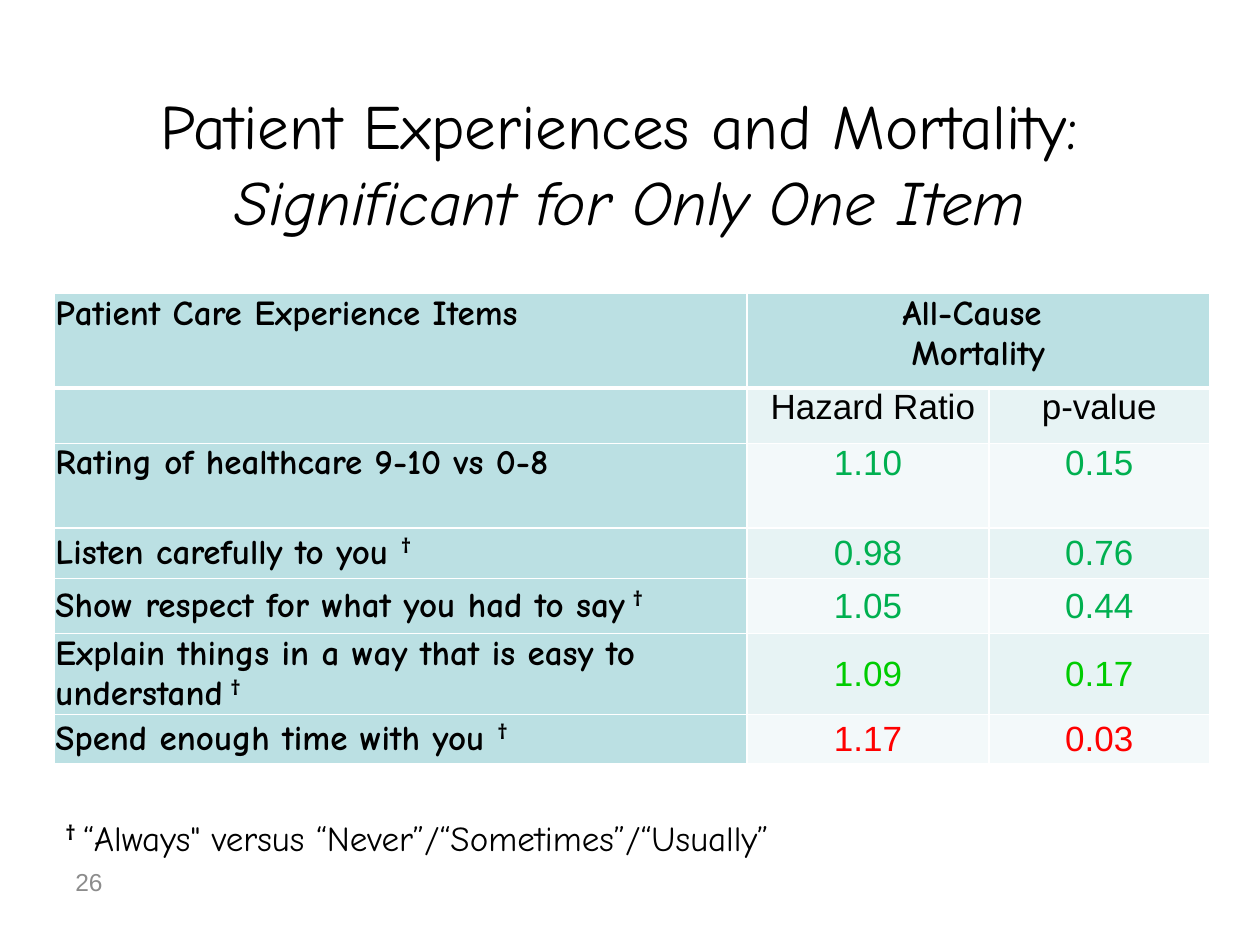
import pptx
import pptx.dml.color
import pptx.enum.text
import pptx.oxml
import pptx.oxml.ns
import pptx.util
from pptx.util import Inches

ALIGN = pptx.enum.text.PP_ALIGN
ANCHOR = pptx.enum.text.MSO_ANCHOR
HEADING = {"name": "Comic Neue", "size": 20, "color": "000000", "bold": True}
FIGURE = {"name": "Arial", "size": 20, "color": "000000", "bold": False}
TEAL, PALE, PALER = "BBE0E3", "E7F3F4", "F3F9FA"
GREEN, BRIGHT_GREEN, RED = "00B050", "00CC00", "FF0000"

COLUMN_WIDTHS = [5.5, 1.92, 1.75]
ROW_HEIGHTS = [0.75, 0.44, 0.67, 0.4, 0.44, 0.39, 0.39]
# item, dagger mark, hazard ratio, p-value, colour of the figures
ITEMS = [
    ("Rating of healthcare 9-10 vs 0-8", "", "1.10", "0.15", GREEN),
    ("Listen carefully to you ", "†", "0.98", "0.76", GREEN),
    ("Show respect for what you had to say", " †", "1.05", "0.44", GREEN),
    ("Explain things in a way that is easy to understand", " †", "1.09", "0.17", BRIGHT_GREEN),
    ("Spend enough time with you ", "†", "1.17", "0.03", RED),
]


def rgb(value):
    return pptx.dml.color.RGBColor.from_string(value)


def add_span(para, text, formats, raised=False):
    span = para.add_run()
    span.text = text
    for name, value in formats.items():
        if name == "color":
            span.font.color.rgb = rgb(value)
        else:
            setattr(span.font, name, pptx.util.Pt(value) if name == "size" else value)
    if raised:
        span._r.get_or_add_rPr().set("baseline", "30000")


def add_text_box(page, box):
    frame = page.shapes.add_textbox(*map(Inches, box)).text_frame
    frame.word_wrap = True
    return frame.paragraphs[0]


def add_title(page, box):
    title = page.shapes.title
    title.left, title.top, title.width, title.height = map(Inches, box)
    frame = title.text_frame
    frame.vertical_anchor = ANCHOR.MIDDLE
    frame.auto_size = pptx.enum.text.MSO_AUTO_SIZE.NONE
    para = frame.paragraphs[0]
    para.alignment = ALIGN.CENTER
    formats = {"name": "Comic Neue", "size": 36, "color": "000000"}
    add_span(para, "Patient Experiences and Mortality: ", formats)
    para.add_line_break()
    add_span(para, "Significant for Only One Item", {**formats, "italic": True})


def style_cell(cell, fill, bottom_width, anchor):
    margins = {"margin_left": 0.01, "margin_right": 0.01, "margin_top": 0, "margin_bottom": 0}
    for name, value in margins.items():
        setattr(cell, name, Inches(value))
    cell.vertical_anchor = anchor
    cell.fill.solid()
    cell.fill.fore_color.rgb = rgb(fill)
    # White borders, which come before the fill in the cell properties
    properties = cell._tc.get_or_add_tcPr()
    for index, side in enumerate("LRTB"):
        width = pptx.util.Pt(bottom_width if side == "B" else 1)
        properties.insert(index, pptx.oxml.parse_xml(
            f'<a:ln{side} {pptx.oxml.ns.nsdecls("a")} w="{width}"><a:solidFill>'
            f'<a:srgbClr val="FFFFFF"/></a:solidFill></a:ln{side}>'))


def fill_cell(cell, text, formats, alignment=ALIGN.CENTER, mark=""):
    frame = cell.text_frame
    for index, line in enumerate(text.split("\n")):
        para = frame.add_paragraph() if index else frame.paragraphs[0]
        para.alignment = alignment
        add_span(para, line, formats)
    if mark:
        add_span(para, mark, formats, raised=True)


def add_results_table(page, box):
    table = page.shapes.add_table(
        len(ROW_HEIGHTS), len(COLUMN_WIDTHS), *map(Inches, box)).table
    for column, width in zip(table.columns, COLUMN_WIDTHS):
        column.width = Inches(width)
    for row, height in zip(table.rows, ROW_HEIGHTS):
        row.height = Inches(height)

    # Teal header row and item column, banded figures
    for r in range(len(ROW_HEIGHTS)):
        for c in range(len(COLUMN_WIDTHS)):
            fill = TEAL if r == 0 or c == 0 else PALE if r % 2 else PALER
            anchor = ANCHOR.TOP if r < 3 else ANCHOR.MIDDLE
            style_cell(table.cell(r, c), fill, 1 if r else 3, anchor)

    # Headings
    table.cell(0, 1).merge(table.cell(0, 2))
    fill_cell(table.cell(0, 0), "Patient Care Experience Items", HEADING, ALIGN.LEFT)
    fill_cell(table.cell(0, 1), "All-Cause \nMortality", HEADING)
    fill_cell(table.cell(1, 1), " Hazard Ratio", FIGURE)
    fill_cell(table.cell(1, 2), "p-value", FIGURE)

    # One row for each item
    for r, (item, mark, ratio, p_value, color) in enumerate(ITEMS, start=2):
        fill_cell(table.cell(r, 0), item, HEADING, ALIGN.LEFT, mark)
        for c, value in enumerate((ratio, p_value), start=1):
            fill_cell(table.cell(r, c), value, {**FIGURE, "color": color})


def add_footnote(page, box):
    para = add_text_box(page, box)
    add_span(para, "† ", HEADING, raised=True)
    add_span(para, "“Always\" versus “Never”/“Sometimes”/“Usually”", {**HEADING, "bold": False})


def add_page_number(page, box):
    para = add_text_box(page, box)
    add_span(para, "26", {"name": "Arial", "size": 14, "color": "8C8C8C"})


def main():
    deck = pptx.Presentation()
    deck.slide_width, deck.slide_height = Inches(10), Inches(7.5)
    page = deck.slides.add_slide(deck.slide_layouts[5])
    add_title(page, (0, 0.75, 10, 1.08))
    add_results_table(page, (0.43, 2.33, sum(COLUMN_WIDTHS), sum(ROW_HEIGHTS)))
    add_footnote(page, (0.42, 6.43, 9, 0.44))
    add_page_number(page, (0.5, 6.83, 2.33, 0.52))
    deck.save("out.pptx")


if __name__ == "__main__":
    main()
